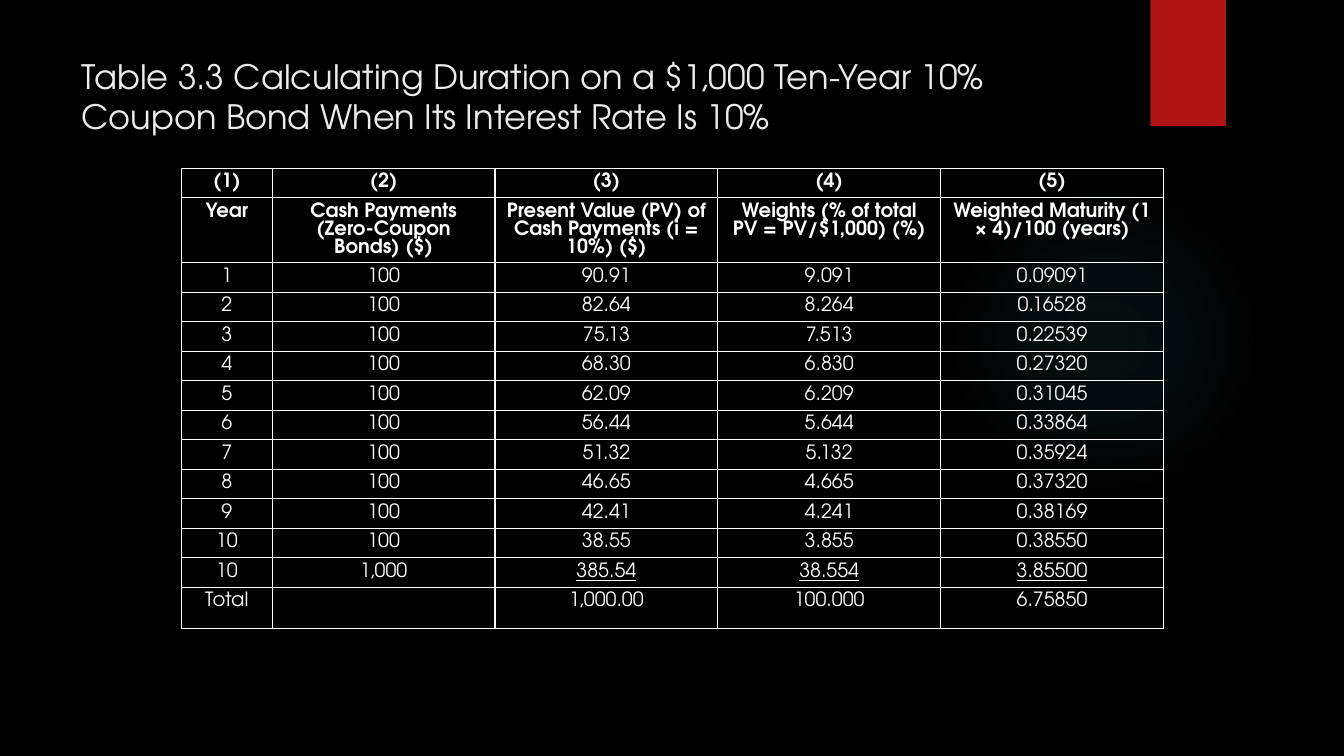
import pptx
import pptx.dml.color
import pptx.enum.dml
import pptx.enum.shapes
import pptx.enum.text
import pptx.oxml
import pptx.oxml.ns
import pptx.util

Inches = pptx.util.Inches
Pt = pptx.util.Pt
RGBColor = pptx.dml.color.RGBColor
SHAPE = pptx.enum.shapes.MSO_SHAPE
ALIGN = pptx.enum.text.PP_ALIGN
ANCHOR = pptx.enum.text.MSO_ANCHOR

BLACK = RGBColor(0x00, 0x00, 0x00)
WHITE = RGBColor(0xFF, 0xFF, 0xFF)
PALE = RGBColor(0xEB, 0xEB, 0xEB)
RED = RGBColor(0xB0, 0x15, 0x13)
TEAL = RGBColor(0x50, 0xB9, 0xC1)
FONT = "TeX Gyre Adventor"
NS = pptx.oxml.ns.nsdecls("a")

TITLE = ("Table 3.3 Calculating Duration on a $1,000 Ten-Year 10% "
         "Coupon Bond When Its Interest Rate Is 10%")
HEADS = [
    ["(1)", "(2)", "(3)", "(4)", "(5)"],
    ["Year", "Cash Payments (Zero-Coupon Bonds) ($)",
     "Present Value (PV) of Cash Payments (i = 10%) ($)",
     "Weights (% of total PV = PV/$1,000) (%)",
     "Weighted Maturity (1 × 4)/100 (years)"],
]
BODY = [
    ["1", "100", "90.91", "9.091", "0.09091"],
    ["2", "100", "82.64", "8.264", "0.16528"],
    ["3", "100", "75.13", "7.513", "0.22539"],
    ["4", "100", "68.30", "6.830", "0.27320"],
    ["5", "100", "62.09", "6.209", "0.31045"],
    ["6", "100", "56.44", "5.644", "0.33864"],
    ["7", "100", "51.32", "5.132", "0.35924"],
    ["8", "100", "46.65", "4.665", "0.37320"],
    ["9", "100", "42.41", "4.241", "0.38169"],
    ["10", "100", "38.55", "3.855", "0.38550"],
    ["10", "1,000", "385.54", "38.554", "3.85500"],
    ["Total", "", "1,000.00", "100.000", "6.75850"],
]


def add_run(para, text, size, color):
    run = para.add_run()
    run.text = text
    run.font.name = FONT
    run.font.size = Pt(size)
    run.font.color.rgb = color
    return run


def add_plain(slide, kind, box):
    shape = slide.shapes.add_shape(kind, *map(Inches, box))
    shape.shadow.inherit = False
    shape.line.fill.background()
    return shape


def add_glow(slide, box):
    """Draw a soft disc that fades out from its centre."""
    glow = add_plain(slide, SHAPE.OVAL, box)
    glow.fill.gradient()
    grad = glow._element.spPr.find(pptx.oxml.ns.qn("a:gradFill"))
    stops = "".join(
        f'<a:gs pos="{pos * 1000}"><a:srgbClr val="{TEAL}">'
        f'<a:alpha val="{alpha * 1000}"/></a:srgbClr></a:gs>'
        for pos, alpha in [(0, 7), (36, 6), (69, 0)])
    fade = pptx.oxml.parse_xml(
        f'<a:gradFill {NS} rotWithShape="1"><a:gsLst>{stops}</a:gsLst>'
        '<a:path path="circle"><a:fillToRect l="50000" t="50000" '
        'r="50000" b="50000"/></a:path></a:gradFill>')
    grad.getparent().replace(grad, fade)


def add_flag(slide, box):
    flag = add_plain(slide, SHAPE.RECTANGLE, box)
    flag.fill.solid()
    flag.fill.fore_color.rgb = RED


def set_title(slide, box):
    """Fill the title and bring it in front of the backdrop."""
    title = slide.shapes.title
    title.left, title.top, title.width, title.height = map(Inches, box)
    slide.shapes._spTree.append(title._element)
    frame = title.text_frame
    frame.word_wrap = True
    frame.auto_size = pptx.enum.text.MSO_AUTO_SIZE.NONE
    frame.vertical_anchor = ANCHOR.TOP
    para = frame.paragraphs[0]
    para.alignment = ALIGN.LEFT
    para.line_spacing = 1.0
    add_run(para, TITLE, 24, PALE)


def set_lines(cell):
    """Give the cell a thin white line on each side."""
    props = cell._tc.get_or_add_tcPr()
    for place, side in enumerate(["lnL", "lnR", "lnT", "lnB"]):
        props.insert(place, pptx.oxml.parse_xml(
            f'<a:{side} {NS} w="{Pt(1)}"><a:solidFill>'
            f'<a:srgbClr val="{WHITE}"/></a:solidFill></a:{side}>'))


def fill_cell(cell, text, bold, under):
    cell.fill.background()
    set_lines(cell)
    para = cell.text_frame.paragraphs[0]
    para.alignment = ALIGN.CENTER
    para.line_spacing = Pt(13)
    if text:
        run = add_run(para, text, 14, WHITE)
        run.font.bold = bold
        run.font.underline = under


def add_grid(slide, box, first=0.9, head=0.64):
    """Place the table; first is the year column, head the label row."""
    rows = HEADS + BODY
    count, wide = len(rows), len(rows[0])
    table = slide.shapes.add_table(count, wide, *map(Inches, box)).table
    table.first_row = False
    table.horz_banding = False
    for col, column in enumerate(table.columns):
        column.width = Inches((box[2] - first) / (wide - 1) if col else first)
    for row, texts in enumerate(rows):
        table.rows[row].height = Inches(
            head if row == 1 else (box[3] - head) / (count - 1))
        for col, text in enumerate(texts):
            summed = row == count - 2 and col > 1
            fill_cell(table.cell(row, col), text, row < len(HEADS), summed)


def main():
    deck = pptx.Presentation()
    deck.slide_width = Inches(13.33)
    deck.slide_height = Inches(7.5)
    slide = deck.slides.add_slide(deck.slide_layouts[5])
    slide.background.fill.solid()
    slide.background.fill.fore_color.rgb = BLACK
    add_glow(slide, (9.41, 1.83, 3.08, 3.08))
    add_flag(slide, (11.41, 0, 0.75, 1.25))
    set_title(slide, (0.71, 0.5, 10.29, 1.53))
    add_grid(slide, (1.8, 1.67, 9.74, 4.45))
    deck.save("out.pptx")


if __name__ == "__main__":
    main()
